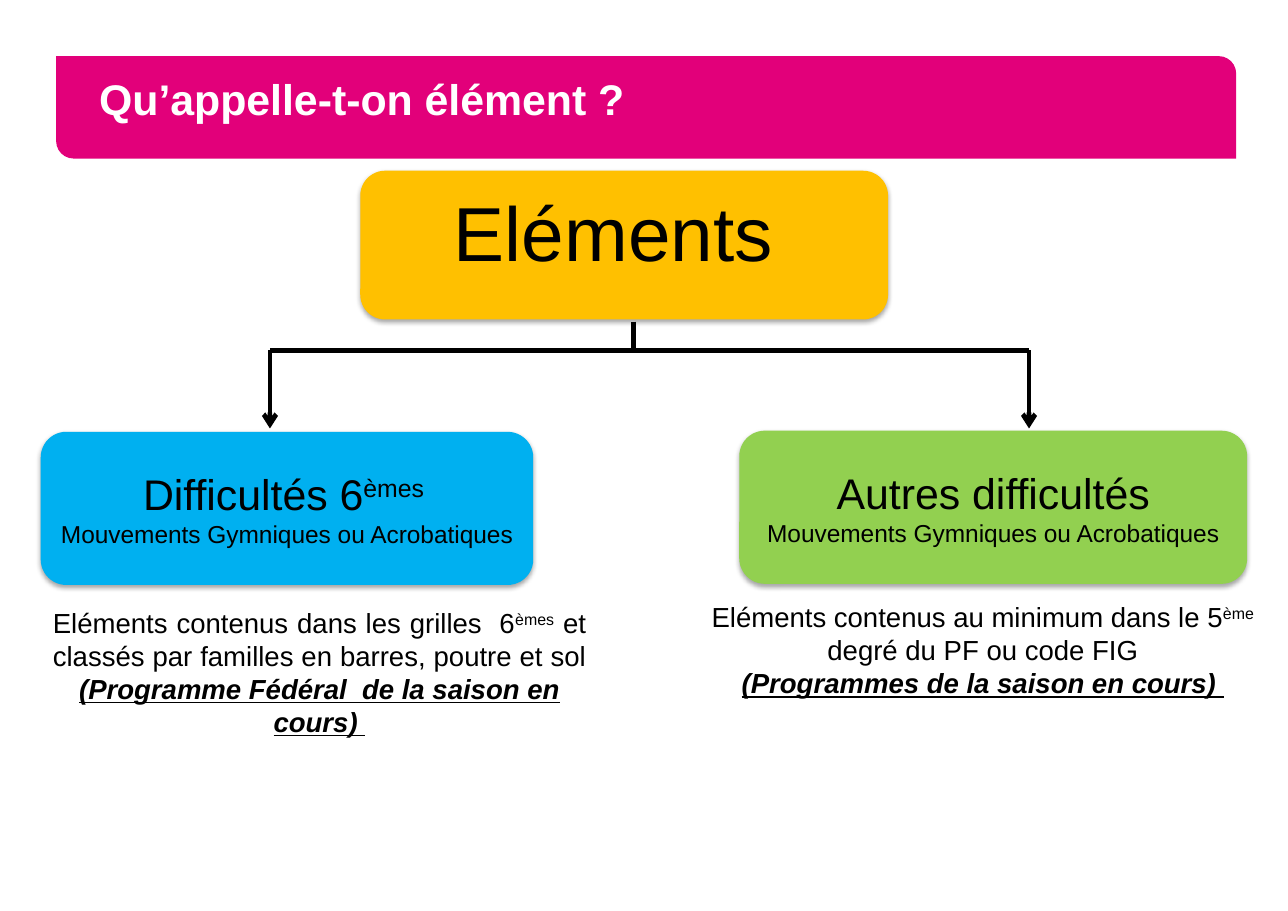
from lxml.etree import SubElement
from pptx import Presentation
from pptx.dml.color import RGBColor
from pptx.enum.shapes import MSO_CONNECTOR, MSO_SHAPE
from pptx.enum.text import MSO_ANCHOR as ANCHOR, PP_ALIGN as ALIGN
from pptx.oxml.ns import qn
from pptx.util import Inches, Pt

COLORS = {
    "band": "E2007A",
    "elements": "FFC000",
    "sixth": "00B0F0",
    "others": "92D050",
    "text": "000000",
    "title": "FFFFFF",
}
FONT = "Arial"
MOVEMENTS = "Mouvements Gymniques ou Acrobatiques"


def color(name):
    return RGBColor.from_string(COLORS[name])


def set_frame(shape, anchor, side=0.11, edge=0.06):
    frame = shape.text_frame
    frame.word_wrap = True
    frame.vertical_anchor = anchor
    frame.margin_left = frame.margin_right = Inches(side)
    frame.margin_top = frame.margin_bottom = Inches(edge)
    return frame


def write(paragraph, text, size, align=ALIGN.CENTER, name="text"):
    """Write text whose parts between ^ marks are superscript."""
    paragraph.alignment = align
    font = paragraph.font
    font.name, font.size = FONT, Pt(size)
    font.color.rgb = color(name)
    for index, part in enumerate(text.split("^")):
        run = paragraph.add_run()
        run.text = part
        if index % 2:
            run.font._element.set("baseline", "30000")


def add_title(slide, left, top, width, height):
    box = [Inches(value) for value in (left, top, width, height)]
    band = slide.shapes.add_shape(MSO_SHAPE.ROUND_2_DIAG_RECTANGLE, *box)
    band.adjustments[0], band.adjustments[1] = 0, 0.17
    band.shadow.inherit = False
    band.fill.solid()
    band.fill.fore_color.rgb = color("band")
    band.line.fill.background()

    title = slide.shapes.title
    band._element.addnext(title._element)  # title in front of the band
    title.left, title.top, title.width, title.height = box
    paragraph = set_frame(title, ANCHOR.MIDDLE, 0.39, 0.05).paragraphs[0]
    write(paragraph, "Qu’appelle-t-on élément ?", 28, ALIGN.LEFT, "title")
    paragraph.font.bold = True
    paragraph.line_spacing = Pt(22)


def add_soft_shadow(shape):
    shape.shadow.inherit = False
    effects = shape._element.spPr.find(qn("a:effectLst"))
    shadow = SubElement(effects, qn("a:outerShdw"), blurRad=str(Pt(3.1)),
                        dist=str(Pt(1.8)), dir="5400000", rotWithShape="0")
    shade = SubElement(shadow, qn("a:srgbClr"), val=COLORS["text"])
    SubElement(shade, qn("a:alpha"), val="35000")


def add_card(slide, left, top, width, height, fill, lines, anchor=ANCHOR.MIDDLE):
    card = slide.shapes.add_shape(MSO_SHAPE.ROUNDED_RECTANGLE, Inches(left),
                                  Inches(top), Inches(width), Inches(height))
    add_soft_shadow(card)
    card.fill.solid()
    card.fill.fore_color.rgb = color(fill)
    card.line.fill.background()
    frame = set_frame(card, anchor)
    for index, (text, size) in enumerate(lines):
        paragraph = frame.add_paragraph() if index else frame.paragraphs[0]
        write(paragraph, text, size)


def add_line(slide, x1, y1, x2, y2, arrow=False):
    line = slide.shapes.add_connector(MSO_CONNECTOR.STRAIGHT, Inches(x1),
                                      Inches(y1), Inches(x2), Inches(y2))
    line.line.color.rgb = color("text")
    line.line.width = Pt(3)
    if arrow:
        SubElement(line.line._get_or_add_ln(), qn("a:tailEnd"), type="arrow")
    SubElement(line._element.spPr, qn("a:effectLst"))


def add_branches(slide, left, top, width, height):
    """Stem, crossbar and two arrows of the tree."""
    right, bar, stem = left + width, top + 0.26, 5.75
    add_line(slide, stem, top, stem, bar)
    add_line(slide, left, bar, right, bar)
    for x in (left, right):
        add_line(slide, x, bar, x, top + height, arrow=True)


def add_note(slide, left, top, width, height, text, source, align):
    note = slide.shapes.add_textbox(Inches(left), Inches(top),
                                    Inches(width), Inches(height))
    frame = set_frame(note, ANCHOR.TOP)
    write(frame.paragraphs[0], text, 18, align)
    paragraph = frame.add_paragraph()
    write(paragraph, source, 18)
    font = paragraph.font
    font.bold = font.italic = font.underline = True


def main():
    presentation = Presentation()
    presentation.slide_width = Inches(11.69)
    presentation.slide_height = Inches(8.27)
    slide = presentation.slides.add_slide(presentation.slide_layouts[5])

    add_title(slide, 0.51, 0.51, 10.71, 0.93)

    # Tree of elements
    add_card(slide, 3.27, 1.55, 4.79, 1.35, "elements",
             [("Eléments ", 50)], ANCHOR.TOP)
    add_card(slide, 0.37, 3.92, 4.47, 1.39, "sixth",
             [("Difficultés 6^èmes ^", 28), (MOVEMENTS, 16)])
    add_card(slide, 6.71, 3.91, 4.61, 1.39, "others",
             [("Autres difficultés", 28), (MOVEMENTS, 16)])
    add_branches(slide, 2.45, 2.92, 6.89, 0.97)

    # Explanations below the cards
    add_note(slide, 0.37, 5.44, 5.06, 1.33,
             "Eléments contenus dans les grilles  6^èmes^ et classés par "
             "familles en barres, poutre et sol ",
             "(Programme Fédéral  de la saison en cours) ", ALIGN.JUSTIFY)
    add_note(slide, 6.26, 5.39, 5.32, 1.33,
             "Eléments contenus au minimum dans le 5^ème^ degré du PF ou code FIG",
             "(Programmes de la saison en cours) ", ALIGN.CENTER)

    presentation.save("out.pptx")


if __name__ == "__main__":
    main()
